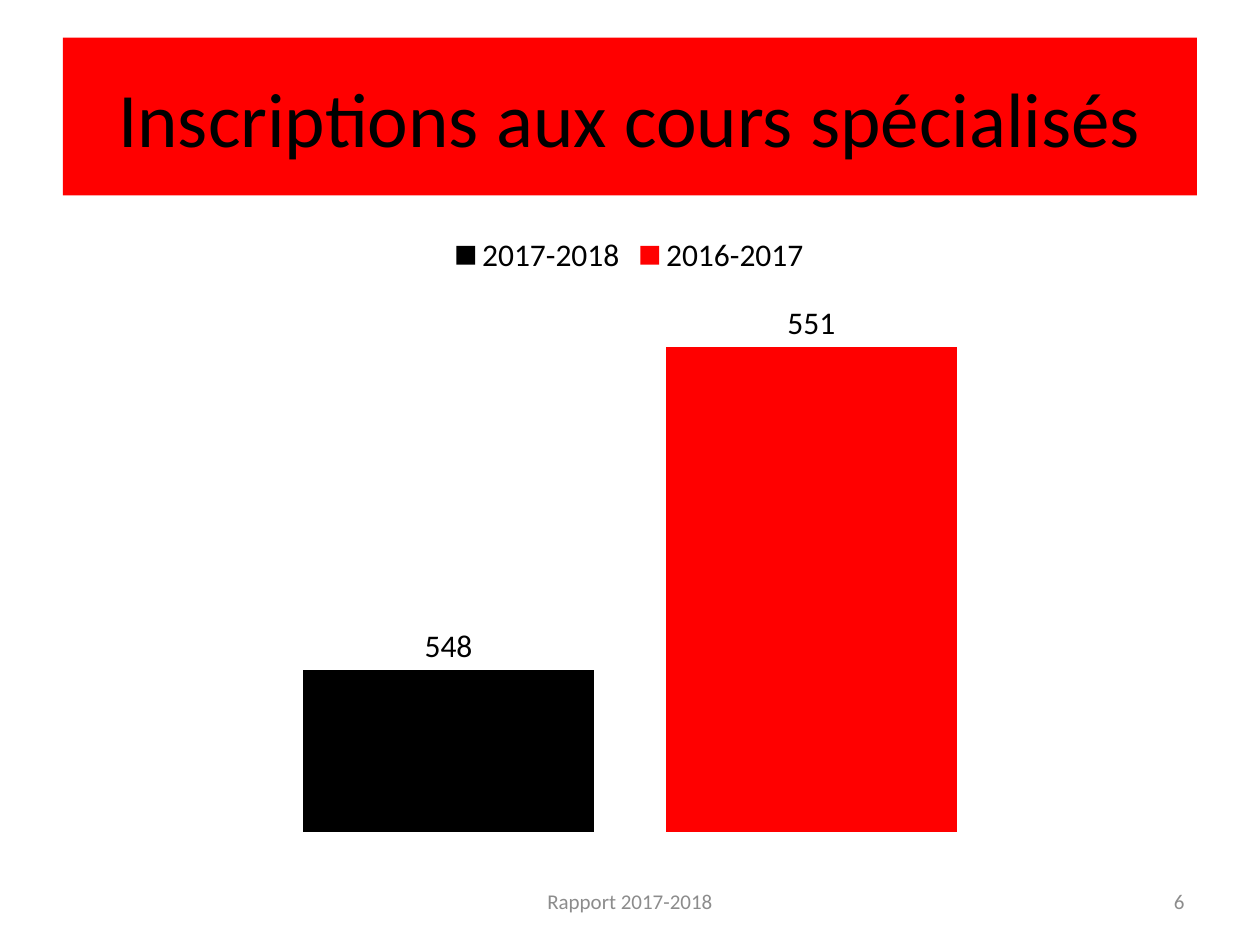
from pptx import Presentation
from pptx.chart.data import CategoryChartData
from pptx.dml.color import RGBColor
from pptx.enum.chart import XL_CHART_TYPE, XL_LABEL_POSITION, XL_LEGEND_POSITION
from pptx.enum.shapes import MSO_SHAPE
from pptx.enum.text import MSO_ANCHOR, PP_ALIGN
from pptx.util import Cm, Pt

COLUMNS = XL_CHART_TYPE.COLUMN_CLUSTERED
ABOVE_BAR = XL_LABEL_POSITION.OUTSIDE_END
LEGEND_TOP = XL_LEGEND_POSITION.TOP
RECTANGLE = MSO_SHAPE.RECTANGLE
MIDDLE = MSO_ANCHOR.MIDDLE
CENTER, RIGHT = PP_ALIGN.CENTER, PP_ALIGN.RIGHT

BLACK = RGBColor(0x00, 0x00, 0x00)
RED = RGBColor(0xFF, 0x00, 0x00)
GREY = RGBColor(0x8C, 0x8C, 0x8C)
FONT = "Calibri"

SLIDE_WIDTH, SLIDE_HEIGHT = Cm(25.4), Cm(19.05)
MARGIN = Cm(1.27)
CONTENT_WIDTH = SLIDE_WIDTH - 2 * MARGIN

ENROLMENTS = [("2017-2018", 548, BLACK), ("2016-2017", 551, RED)]


def write_line(frame, text, size, color, alignment):
    frame.word_wrap = True
    frame.vertical_anchor = MIDDLE
    paragraph = frame.paragraphs[0]
    paragraph.alignment = alignment
    run = paragraph.add_run()
    run.text = text
    run.font.name = FONT
    run.font.size = Pt(size)
    run.font.color.rgb = color


def add_title(slide, left, top, width, height):
    banner = slide.shapes.add_shape(RECTANGLE, left, top, width, height)
    banner.shadow.inherit = False
    banner.fill.solid()
    banner.fill.fore_color.rgb = RED
    banner.line.fill.background()
    write_line(banner.text_frame, "Inscriptions aux cours spécialisés", 44, BLACK, CENTER)


def add_enrolment_chart(slide, left, top, width, height):
    data = CategoryChartData()
    data.categories = ["1"]
    for year, count, _ in ENROLMENTS:
        data.add_series(year, [count])
    chart = slide.shapes.add_chart(COLUMNS, left, top, width, height, data).chart
    chart.has_title = False
    chart.font.name = FONT
    chart.font.size = Pt(18)
    chart.font.color.rgb = BLACK

    chart.has_legend = True
    chart.legend.position = LEGEND_TOP
    chart.legend.include_in_layout = False

    chart.category_axis.visible = False
    counts = chart.value_axis
    counts.visible = False
    counts.has_major_gridlines = False
    counts.minimum_scale = 546.5
    counts.maximum_scale = 551.5

    plot = chart.plots[0]
    plot.vary_by_categories = False
    plot.gap_width = 150
    plot.overlap = -25
    for series, (_, _, color) in zip(plot.series, ENROLMENTS):
        series.format.fill.solid()
        series.format.fill.fore_color.rgb = color
        series.data_labels.show_value = True
        series.data_labels.position = ABOVE_BAR


def add_footer(slide, left, top, width, height):
    """Put the report name in the middle of the box and the page number at its right."""
    report_width, number_width = Cm(8.04), Cm(5.93)
    entries = [
        ("Rapport 2017-2018", left + (width - report_width) // 2, report_width, CENTER),
        ("6", left + width - number_width, number_width, RIGHT),
    ]
    for text, entry_left, entry_width, alignment in entries:
        entry = slide.shapes.add_textbox(entry_left, top, entry_width, height)
        write_line(entry.text_frame, text, 12, GREY, alignment)


def main():
    presentation = Presentation()
    presentation.slide_width = SLIDE_WIDTH
    presentation.slide_height = SLIDE_HEIGHT
    slide = presentation.slides.add_slide(presentation.slide_layouts[6])
    add_title(slide, MARGIN, Cm(0.76), CONTENT_WIDTH, Cm(3.18))
    add_enrolment_chart(slide, MARGIN, Cm(4.45), CONTENT_WIDTH, Cm(12.57))
    add_footer(slide, MARGIN, Cm(17.65), CONTENT_WIDTH, Cm(1.02))
    presentation.save("out.pptx")


if __name__ == "__main__":
    main()
